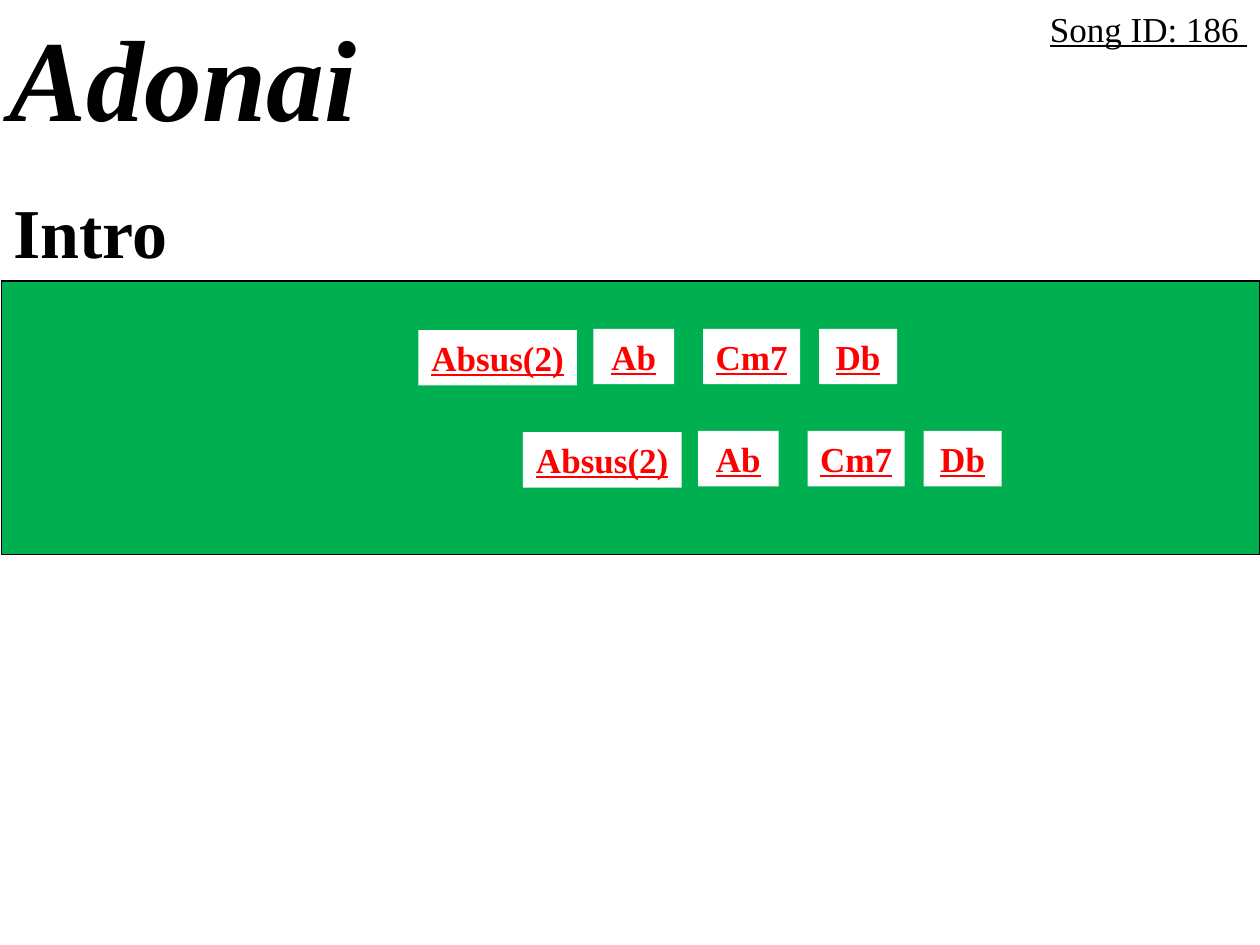
from pptx import Presentation
from pptx.dml.color import RGBColor
from pptx.enum.shapes import MSO_SHAPE
from pptx.enum.text import MSO_ANCHOR, PP_ALIGN
from pptx.util import Inches, Pt

presentation = Presentation()
presentation.slide_width = Inches(10)
presentation.slide_height = Inches(7.5)
column = presentation.slide_width / 100
row = presentation.slide_height / 75
slide = presentation.slides.add_slide(presentation.slide_layouts[6])


def color(hex_value):
    return RGBColor.from_string(hex_value)


def add_panel(left, top, width, height, fill="FFFFFF", words="", size=20, ink="000000",
              align=PP_ALIGN.LEFT, bold=False, italic=False, underline=False):
    panel = slide.shapes.add_shape(
        MSO_SHAPE.RECTANGLE, round(left * column), round(top * row),
        round(width * column), round(height * row))
    panel.shadow.inherit = False
    panel.fill.solid()
    panel.fill.fore_color.rgb = color(fill)
    panel.line.fill.background()
    if words:
        frame = panel.text_frame
        frame.word_wrap = False
        frame.vertical_anchor = MSO_ANCHOR.TOP
        paragraph = frame.paragraphs[0]
        paragraph.alignment = align
        run = paragraph.add_run()
        run.text = words
        run.font.name = "Times New Roman"
        run.font.size = Pt(size)
        run.font.color.rgb = color(ink)
        run.font.bold = bold
        run.font.italic = italic
        run.font.underline = underline
    return panel


add_panel(-0.2, 0, 76.1, 12.1, words="Adonai", size=66, bold=True, italic=True)
add_panel(60.1, 0.1, 39.9, 4.4, words="Song ID: 186 ", align=PP_ALIGN.RIGHT, underline=True)

intro_band = add_panel(0.1, 22.3, 99.9, 21.7, fill="00B050")
intro_band.line.color.rgb = color("000000")
intro_band.line.width = Pt(0.75)
add_panel(0.1, 14.5, 33.3, 7.7, words="Intro", size=40, bold=True)

chords = [
    ("Absus(2)", 0, 0.1, 12.6),
    ("Ab", 13.9, 0, 6.4),
    ("Cm7", 22.6, 0, 7.7),
    ("Db", 31.8, 0, 6.2),
]
for line_left, line_top in [(33.2, 26.1), (41.5, 34.2)]:
    for chord, offset, drop, width in chords:
        add_panel(line_left + offset, line_top + drop, width, 4.4, words=chord,
                  ink="FF0000", align=PP_ALIGN.CENTER, bold=True, underline=True)

presentation.save("out.pptx")
